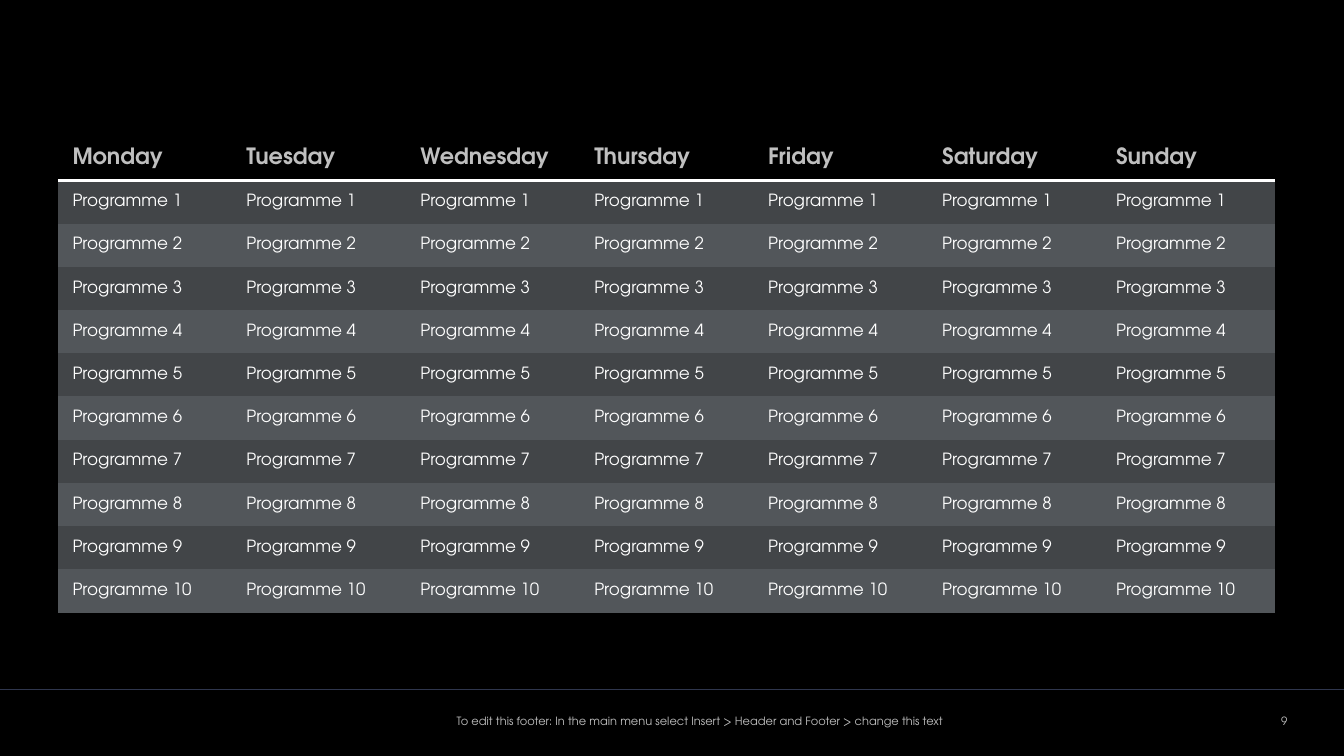
from dataclasses import dataclass

from lxml import etree
from pptx import Presentation
from pptx.dml.color import RGBColor
from pptx.enum.shapes import MSO_CONNECTOR
from pptx.enum.text import MSO_ANCHOR, PP_ALIGN
from pptx.oxml.ns import qn
from pptx.util import Inches, Pt

STRAIGHT = MSO_CONNECTOR.STRAIGHT
MIDDLE = MSO_ANCHOR.MIDDLE
CENTER, RIGHT = PP_ALIGN.CENTER, PP_ALIGN.RIGHT
NO_STYLE_NO_GRID = "{2D5ABB26-0587-4C30-8999-92F81FD0307C}"


@dataclass(frozen=True)
class Theme:
    font: str = "TeX Gyre Adventor"
    background: str = "000000"
    muted: str = "BFBFBF"
    text: str = "FFFFFF"
    bands: tuple = ("424548", "52565A")
    footer_line: str = "2F364D"
    header_size: float = 12
    body_size: float = 9
    footer_size: float = 6.1


theme = Theme()


def set_font(para, size, color, bold=False):
    para.font.name = theme.font
    para.font.size = Pt(size)
    para.font.bold = bold
    para.font.color.rgb = RGBColor.from_string(color)


def add_bottom_border(cell, color, width):
    properties = cell._tc.get_or_add_tcPr()
    border = etree.Element(qn("a:lnB"), w=str(Pt(width)))
    fill = etree.SubElement(border, qn("a:solidFill"))
    etree.SubElement(fill, qn("a:srgbClr"), val=color)
    properties.insert(0, border)


deck = Presentation()
deck.slide_width = Inches(10)
deck.slide_height = deck.slide_width * 9 // 16
page = deck.slides.add_slide(deck.slide_layouts[6])
page.background.fill.solid()
page.background.fill.fore_color.rgb = RGBColor.from_string(theme.background)

# Footer rule
footer_top = Inches(5.13)
rule = page.shapes.add_connector(STRAIGHT, 0, footer_top, Inches(10.03), footer_top)
rule.line.color.rgb = RGBColor.from_string(theme.footer_line)
rule.line.width = Pt(1)
etree.SubElement(rule._element.spPr, qn("a:effectLst"))

# Weekly schedule
days = ["Monday", "Tuesday", "Wednesday", "Thursday", "Friday", "Saturday", "Sunday"]
programmes = [f"Programme {number}" for number in range(1, 11)]
rows = [days] + [[programme] * len(days) for programme in programmes]

frame = page.shapes.add_table(len(rows), len(days), Inches(0.43), Inches(1.02),
                              Inches(9.06), Inches(3.54))
schedule = frame.table
schedule._tbl.tblPr.find(qn("a:tableStyleId")).text = NO_STYLE_NO_GRID

for row_index, labels in enumerate(rows):
    is_header = row_index == 0
    fill_color = theme.background if is_header else theme.bands[(row_index - 1) % 2]
    for column_index, label in enumerate(labels):
        cell = schedule.cell(row_index, column_index)
        cell.text = label
        cell.vertical_anchor = MIDDLE
        cell.margin_left = cell.margin_right = Inches(0.11)
        cell.margin_top = cell.margin_bottom = Inches(0.02)
        cell.fill.solid()
        cell.fill.fore_color.rgb = RGBColor.from_string(fill_color)
        para = cell.text_frame.paragraphs[0]
        if is_header:
            set_font(para, theme.header_size, theme.muted, bold=True)
            add_bottom_border(cell, theme.text, 2)
        else:
            set_font(para, theme.body_size, theme.text)

# Footer text: wording, left, width, right margin, alignment
footers = [
    ("9", 8.91, 0.67, 0, RIGHT),
    ("To edit this footer: In the main menu select Insert > Header and Footer > "
     "change this text", 1.75, 6.92, 0.1, CENTER),
]
for wording, left, width, right_margin, alignment in footers:
    box = page.shapes.add_textbox(Inches(left), Inches(5.2), Inches(width), Inches(0.33))
    text_frame = box.text_frame
    text_frame.word_wrap = True
    text_frame.vertical_anchor = MIDDLE
    text_frame.margin_right = Inches(right_margin)
    text_frame.text = wording
    para = text_frame.paragraphs[0]
    para.alignment = alignment
    set_font(para, theme.footer_size, theme.muted)

deck.save("out.pptx")
